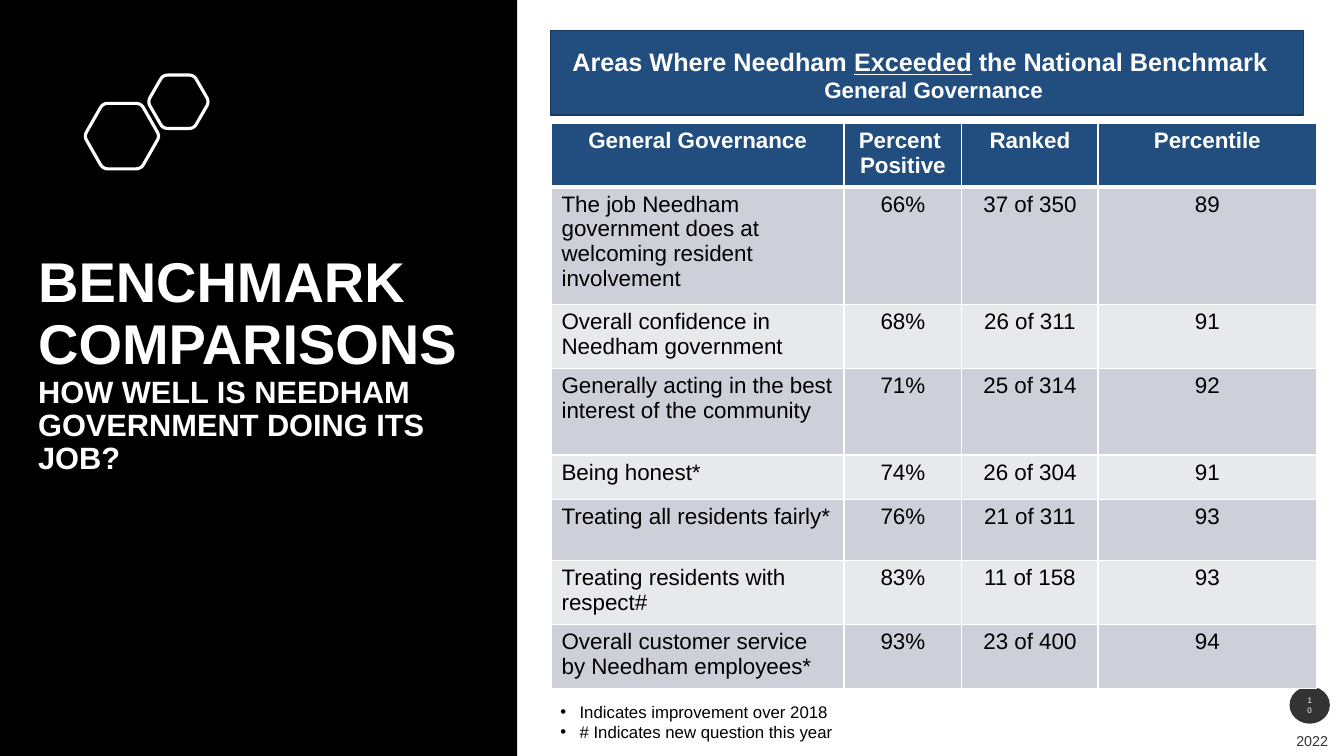
import math
from pptx import Presentation
from pptx.dml.color import RGBColor
from pptx.enum import shapes, text
from pptx.oxml import parse_xml
from pptx.oxml.ns import nsdecls
from pptx.util import Inches, Pt

COLORS = {"white": "FFFFFF", "black": "000000", "navy": "224E7F", "edge": "193A5E",
          "charcoal": "333333", "band_dark": "CDD0D8", "band_light": "E8E9EC"}
FONT = "Arial"
TITLE = [("BENCHMARK COMPARISONS", 40, 0.92),
         ("HOW WELL IS NEEDHAM GOVERNMENT DOING ITS JOB?", 22, 0.9)]
BANNER = ["Areas Where Needham ", "Exceeded", " the National Benchmark"]
BANNER_TOPIC = "General Governance"
RESULTS = [
    ("General Governance", "Percent \nPositive", "Ranked", "Percentile"),
    ("The job Needham government does at welcoming resident involvement",
     "66%", "37 of 350", "89"),
    ("Overall confidence in Needham government", "68%", "26 of 311", "91"),
    ("Generally acting in the best interest of the community", "71%", "25 of 314", "92"),
    ("Being honest*", "74%", "26 of 304", "91"),
    ("Treating all residents fairly*", "76%", "21 of 311", "93"),
    ("Treating residents with respect#", "83%", "11 of 158", "93"),
    ("Overall customer service by Needham employees*", "93%", "23 of 400", "94"),
]
COLUMN_WIDTHS = [2.9, 1.17, 1.35, 2.17]
ROW_HEIGHTS = [0.61, 1.12, 0.61, 0.86, 0.44, 0.61, 0.61, 0.61]
FOOTNOTES = ["Indicates improvement over 2018", "# Indicates new question this year"]
HEXAGONS = [(1.21, 1.35, 0.65), (1.77, 1.01, 0.53)]  # centre x, centre y, height
UNITS_PER_INCH = 1000
CENTER = text.PP_ALIGN.CENTER

prs = Presentation()
prs.slide_width, prs.slide_height = Inches(13.33), Inches(7.5)
slide = prs.slides.add_slide(prs.slide_layouts[6])


def rgb(name):
    return RGBColor.from_string(COLORS[name])


def style(item, size, color, bold=False):
    item.font.name, item.font.size, item.font.bold = FONT, Pt(size), bold
    item.font.color.rgb = rgb(color)


def add_block(kind, box, fill, edge=None):
    block = slide.shapes.add_shape(kind, *map(Inches, box))
    block.shadow.inherit = False
    block.fill.solid()
    block.fill.fore_color.rgb = rgb(fill)
    if edge:
        block.line.color.rgb = rgb(edge)
        block.line.width = Pt(1)
    else:
        block.line.fill.background()
    return block


def add_text(box, anchor=text.MSO_ANCHOR.TOP):
    frame = slide.shapes.add_textbox(*map(Inches, box)).text_frame
    frame.word_wrap = True
    frame.vertical_anchor = anchor
    return frame


def fill_lines(frame, lines):
    frame.text = "\n".join(lines)
    return frame.paragraphs


def add_hexagon(cx, cy, height, rounding=0.05, steps=6):
    radius = height / math.sqrt(3)
    corners = [(cx + radius * math.cos(k * math.pi / 3),
                cy + radius * math.sin(k * math.pi / 3)) for k in range(6)]
    outline = []
    for k, corner in enumerate(corners):
        start, end = [[c + (n - c) * rounding / radius for c, n in zip(corner, near)]
                      for near in (corners[k - 1], corners[(k + 1) % 6])]
        for t in (i / steps for i in range(steps + 1)):
            outline.append([UNITS_PER_INCH * ((1 - t) ** 2 * s + 2 * t * (1 - t) * c + t * t * e)
                            for s, c, e in zip(start, corner, end)])
    builder = slide.shapes.build_freeform(*outline[0], scale=Inches(1) / UNITS_PER_INCH)
    builder.add_line_segments(outline[1:], close=True)
    hexagon = builder.convert_to_shape()
    hexagon.shadow.inherit = False
    hexagon.fill.background()
    hexagon.line.color.rgb = rgb("white")
    hexagon.line.width = Pt(2.25)


def add_borders(cell, header):
    for side in "LRTB":
        width = Pt(3) if header and side == "B" else Pt(1)
        cell._tc.get_or_add_tcPr().append(parse_xml(
            f'<a:ln{side} {nsdecls("a")} w="{width}"><a:solidFill>'
            f'<a:srgbClr val="{COLORS["white"]}"/></a:solidFill></a:ln{side}>'))


# Left panel with hexagons and title
add_block(shapes.MSO_SHAPE.RECTANGLE, (0, 0, 5.13, 7.5), "black")
for hexagon_place in HEXAGONS:
    add_hexagon(*hexagon_place)
title = add_text((0.28, 1.28, 4.48, 4.68), text.MSO_ANCHOR.MIDDLE)
title_lines = fill_lines(title, [wording for wording, _, _ in TITLE])
for line, (_, size, spacing) in zip(title_lines, TITLE):
    style(line, size, "white", True)
    line.line_spacing = spacing

# Year and slide number
year = add_text((12.03, 7.23, 1.24, 0.24), text.MSO_ANCHOR.MIDDLE)
year.text = "2022"
year.paragraphs[0].alignment = text.PP_ALIGN.RIGHT
style(year.paragraphs[0], 10.2, "charcoal")
page = add_block(shapes.MSO_SHAPE.OVAL, (12.79, 6.81, 0.4, 0.37), "charcoal").text_frame
page.text = "10"
page.paragraphs[0].alignment = CENTER
style(page.paragraphs[0], 5.7, "white")

# Banner
add_block(shapes.MSO_SHAPE.RECTANGLE, (5.46, 0.3, 7.47, 0.84), "navy", "edge")
banner = add_text((5.58, 0.41, 7.36, 0.67))
headline = banner.paragraphs[0]
for words in BANNER:
    run = headline.add_run()
    run.text = words
    if words == "Exceeded":
        run.font.underline = True
style(headline, 18, "white", True)
topic = banner.add_paragraph()
topic.text = BANNER_TOPIC
topic.alignment = CENTER
style(topic, 16, "white", True)

# Results table
results = slide.shapes.add_table(len(RESULTS), len(COLUMN_WIDTHS), Inches(5.47), Inches(1.22),
                                 Inches(sum(COLUMN_WIDTHS)), Inches(sum(ROW_HEIGHTS))).table
for column, width in zip(results.columns, COLUMN_WIDTHS):
    column.width = Inches(width)
for r, (values, height) in enumerate(zip(RESULTS, ROW_HEIGHTS)):
    results.rows[r].height = Inches(height)
    header = r == 0
    band = "navy" if header else ("band_light", "band_dark")[r % 2]
    for c, value in enumerate(values):
        cell = results.cell(r, c)
        add_borders(cell, header)
        cell.fill.solid()
        cell.fill.fore_color.rgb = rgb(band)
        for line in fill_lines(cell.text_frame, value.split("\n")):
            style(line, 16, "white" if header else "black", header)
            if header or c > 0:
                line.alignment = CENTER

# Footnotes
for note in fill_lines(add_text((5.46, 6.91, 7.29, 0.5)), FOOTNOTES):
    properties = note._p.get_or_add_pPr()
    properties.set("marL", str(Inches(0.19)))
    properties.set("indent", str(-Inches(0.19)))
    properties.append(parse_xml(f'<a:buFont {nsdecls("a")} typeface="{FONT}"/>'))
    properties.append(parse_xml(f'<a:buChar {nsdecls("a")} char="•"/>'))
    style(note, 12, "black")

prs.save("out.pptx")
